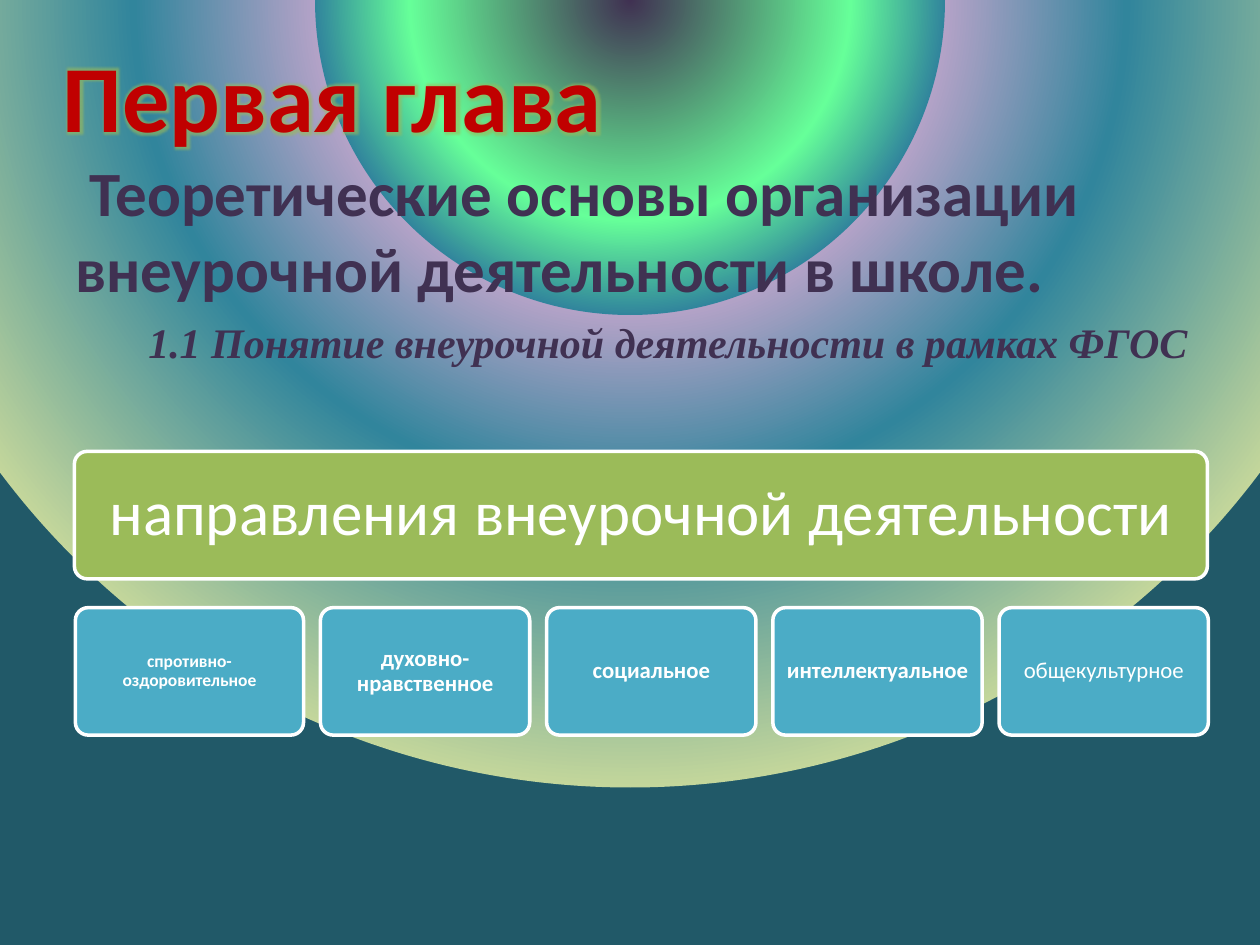
from pptx import Presentation
from pptx.dml.color import RGBColor
from pptx.enum.shapes import MSO_SHAPE
from pptx.enum.text import MSO_ANCHOR, MSO_AUTO_SIZE, PP_ALIGN
from pptx.oxml import parse_xml
from pptx.oxml.ns import nsdecls, qn
from pptx.util import Cm, Pt
from lxml.etree import SubElement

RED = RGBColor(0xC0, 0x00, 0x00)
PURPLE = RGBColor(0x40, 0x31, 0x52)
GREEN = RGBColor(0x9B, 0xBB, 0x59)
BLUE = RGBColor(0x4B, 0xAC, 0xC6)
WHITE = RGBColor(0xFF, 0xFF, 0xFF)

STOPS = [(0, "31859C"), (0, "31859C"), (0, "31859C"), (0, "403152"), (28, "66FF99"),
         (40, "31859C"), (40, "B3A2C7"), (63, "31859C"), (100, "C3D69B"), (100, "215968")]

# Text, size, bold, inset in cm
DIRECTIONS = [
    ("спротивно- оздоровительное", 10, True, 0.1),
    ("духовно- нравственное", 13, True, 0.13),
    ("социальное", 13, True, 0.13),
    ("интеллектуальное", 13, True, 0.13),
    ("общекультурное", 13, False, 0.13),
]


def set_background(s):
    s.background.fill.solid()
    solid = s.background._cSld.find(".//" + qn("a:solidFill"))
    stops = "".join(f'<a:gs pos="{pos * 1000}"><a:srgbClr val="{color}"/></a:gs>'
                    for pos, color in STOPS)
    grad = parse_xml(
        f'<a:gradFill {nsdecls("a")} rotWithShape="1"><a:gsLst>{stops}</a:gsLst>'
        '<a:path path="circle"><a:fillToRect l="100000" t="-60000" r="100000" b="200000"/>'
        '</a:path></a:gradFill>')
    solid.getparent().replace(solid, grad)


def add_run(p, text, size, color, bold=False, italic=False, name="Calibri"):
    r = p.add_run()
    r.text = text
    r.font.size = Pt(size)
    r.font.name = name
    r.font.bold = bold
    r.font.italic = italic
    r.font.color.rgb = color
    return r


def add_glow(r, color, radius):
    glow = parse_xml(
        f'<a:effectLst {nsdecls("a")}><a:glow rad="{Pt(radius)}"><a:srgbClr val="{color}">'
        '<a:alpha val="60000"/></a:srgbClr></a:glow></a:effectLst>')
    r.font._element.find(qn("a:solidFill")).addnext(glow)


def add_title(s, text):
    sp = s.shapes.title
    sp.left, sp.top, sp.width, sp.height = Cm(0.53), Cm(0.64), Cm(11.91), Cm(2.57)
    tf = sp.text_frame
    tf.word_wrap = False
    tf.auto_size = MSO_AUTO_SIZE.NONE
    tf.vertical_anchor = MSO_ANCHOR.TOP
    p = tf.paragraphs[0]
    p.alignment = PP_ALIGN.CENTER
    add_glow(add_run(p, text, 54, RED, bold=True), GREEN, 5)


def add_textbox(s, left, top, width, height):
    tf = s.shapes.add_textbox(Cm(left), Cm(top), Cm(width), Cm(height)).text_frame
    tf.word_wrap = True
    return tf


def number_paragraph(p, indent):
    p.level = 1
    pPr = p._p.get_or_add_pPr()
    pPr.set("marL", str(Cm(indent)))
    pPr.set("indent", "0")
    SubElement(pPr, qn("a:buAutoNum"), type="arabicPeriod")


def add_card(s, left, top, width, height, fill, text, size, bold, inset):
    sp = s.shapes.add_shape(MSO_SHAPE.ROUNDED_RECTANGLE,
                            Cm(left), Cm(top), Cm(width), Cm(height))
    sp.adjustments[0] = 0.1
    sp.shadow.inherit = False
    sp.fill.solid()
    sp.fill.fore_color.rgb = fill
    sp.line.color.rgb = WHITE
    sp.line.width = Pt(2)
    tf = sp.text_frame
    tf.word_wrap = True
    tf.vertical_anchor = MSO_ANCHOR.MIDDLE
    tf.margin_left = tf.margin_right = tf.margin_top = tf.margin_bottom = Cm(inset)
    p = tf.paragraphs[0]
    p.alignment = PP_ALIGN.CENTER
    p.line_spacing = 0.9
    add_run(p, text, size, WHITE, bold)


def main():
    prs = Presentation()
    prs.slide_width, prs.slide_height = Cm(25.4), Cm(19.05)
    s = prs.slides.add_slide(prs.slide_layouts[5])
    set_background(s)

    # Chapter heading
    add_title(s, " Первая глава")
    tf = add_textbox(s, 1.27, 2.97, 21.54, 4.7)
    p = tf.paragraphs[0]
    add_run(p, " ", 36, WHITE)
    add_run(p, "Теоретические основы организации", 36, PURPLE, bold=True)
    add_run(tf.add_paragraph(), "внеурочной деятельности в школе.", 36, PURPLE, bold=True)

    # Numbered section
    p = add_textbox(s, 1.47, 6.25, 22.96, 2.31).paragraphs[0]
    number_paragraph(p, 1.27)
    add_run(p, "1 Понятие внеурочной деятельности в рамках ФГОС", 24, PURPLE,
            bold=True, italic=True, name="Times New Roman")

    # Directions: one header above a row of cards, the first card wider
    add_card(s, 1.5, 9.1, 22.84, 2.57, GREEN,
             "направления внеурочной деятельности", 36, False, 0.38)
    left, gap = 1.52, 0.34
    for i, (text, size, bold, inset) in enumerate(DIRECTIONS):
        width = 4.6 if i == 0 else 4.22
        add_card(s, left, 12.25, width, 2.57, BLUE, text, size, bold, inset)
        left += width + gap

    prs.save("out.pptx")


if __name__ == "__main__":
    main()
